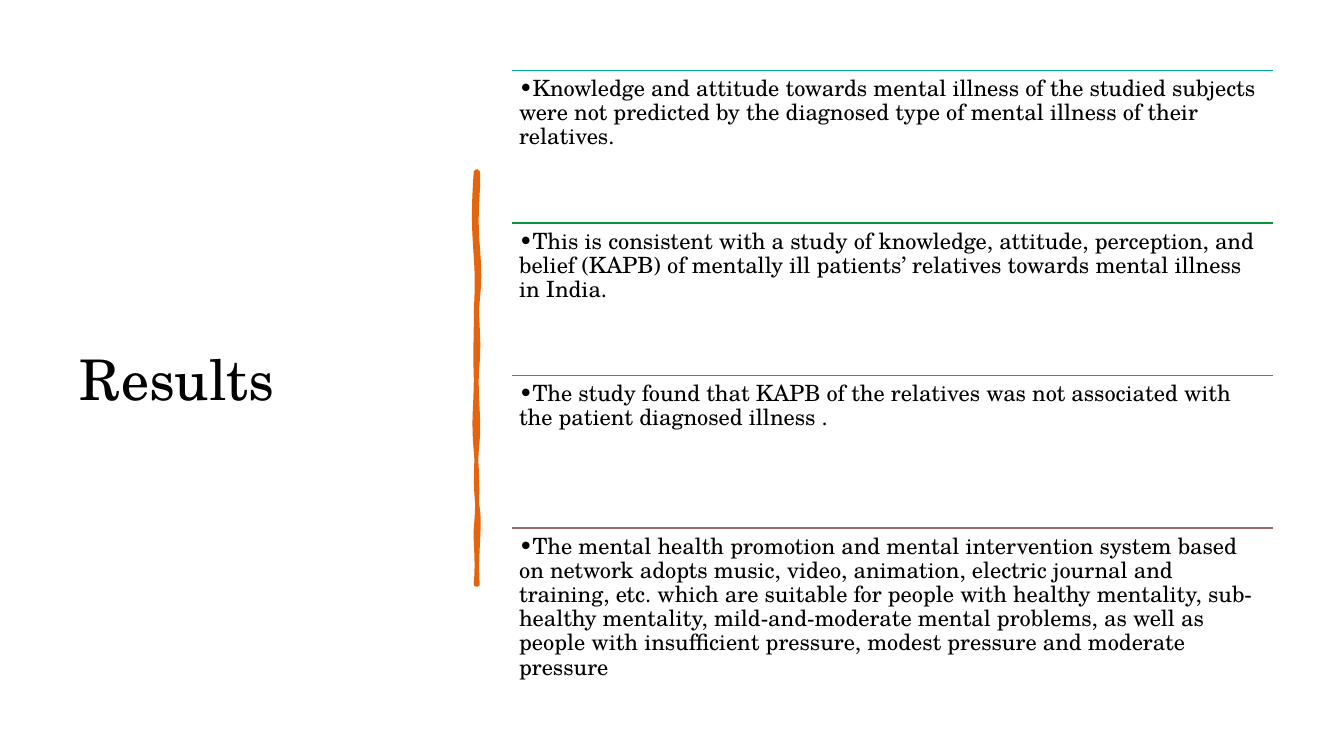
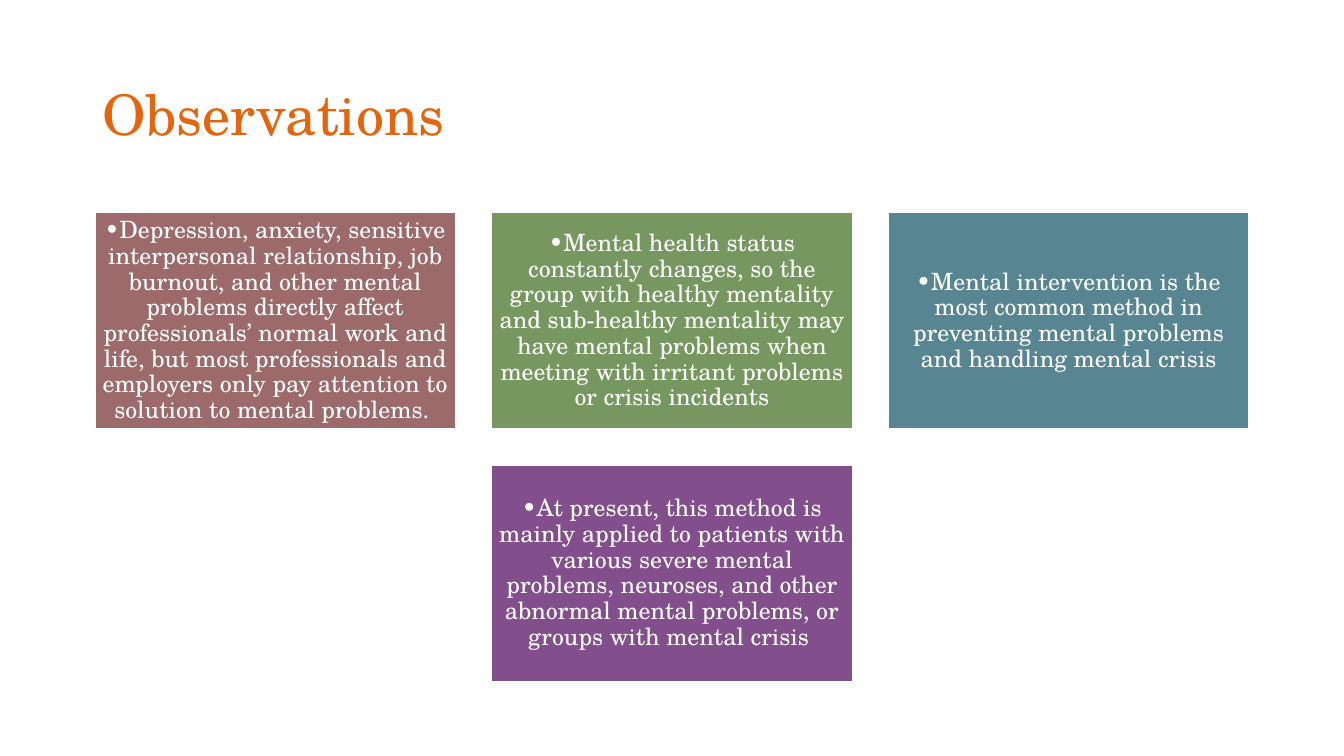
from dataclasses import dataclass

from lxml import etree
from pptx import Presentation
from pptx.dml.color import RGBColor
from pptx.enum.shapes import MSO_CONNECTOR, MSO_SHAPE
from pptx.enum.text import MSO_ANCHOR, PP_ALIGN
from pptx.oxml.ns import qn
from pptx.util import Pt

LEFT, CENTER = PP_ALIGN.LEFT, PP_ALIGN.CENTER
TOP, MIDDLE = MSO_ANCHOR.TOP, MSO_ANCHOR.MIDDLE
RECT, STRAIGHT = MSO_SHAPE.RECTANGLE, MSO_CONNECTOR.STRAIGHT

# Shared style
FONT = "TeX Gyre Schola"
BLACK, WHITE, ORANGE = "000000", "FFFFFF", "E4650E"
WIDE, HIGH = 960, 540
SIDES = ("left", "right", "top", "bottom")
TITLE = {"size": 40, "align": LEFT, "anchor": MIDDLE, "space": 1.0,
         "pads": (7.2, 7.2, 3.6, 3.6)}
POINT = {"size": 16, "align": LEFT, "anchor": TOP, "space": 0.9, "pads": (4.8,) * 4}
CARD = POINT | {"size": 17, "align": CENTER, "anchor": MIDDLE}

# Results list
LIST_X, LIST_Y, LIST_W, STEP = 366, 50.4, 543.6, 108.95

# Card grid
COLS, CARD_W, CARD_Y = 3, 257.6, 151.9
CARD_H, GAP = CARD_W * 0.6, CARD_W * 0.1

# Brush stroke: start, then two controls and an end for each curve
START = (339.8, 122.4)
CURVES = [
    ((340.6, 122.4), (340.6, 122.4), (341.3, 122.4)),
    ((342.7, 133.9), (339.1, 149), (341.3, 175)),
    ((343.4, 200.9), (342, 205.2), (341.3, 215.3)),
    ((339.8, 225.4), (342.7, 238.3), (341.3, 258.5)),
    ((339.1, 278.6), (342.7, 297.4), (341.3, 313.9)),
    ((339.8, 329.8), (339.1, 349.2), (341.3, 362.9)),
    ((343.4, 376.6), (339.8, 394.6), (341.3, 417.6)),
    ((340.6, 417.6), (340.6, 417.6), (339.8, 417.6)),
    ((341.3, 398.9), (339.1, 385.9), (339.8, 377.3)),
    ((340.6, 369.4), (342, 347.8), (339.8, 322.6)),
    ((337.7, 297.4), (339.8, 292.3), (339.8, 270)),
    ((339.1, 248.4), (339.8, 245.5), (339.8, 229.7)),
    ((339.8, 214.6), (341.3, 205.2), (339.8, 183.6)),
    ((338.4, 162.7), (337.7, 152.6), START),
]


@dataclass
class Item:
    color: str
    text: str


POINTS = [
    Item("00A5AB", "•Knowledge and attitude towards mental illness of the studied "
         "subjects were not predicted by the diagnosed type of mental illness of "
         "their relatives."),
    Item("09963B", "•This is consistent with a study of knowledge, attitude, "
         "perception, and belief (KAPB) of mentally ill patients’ relatives "
         "towards mental illness in India. "),
    Item("E64823", "•The study found that KAPB of the relatives was not associated "
         "with the patient diagnosed illness ."),
    Item("9C6A6A", "•The mental health promotion and mental intervention system "
         "based on network adopts music, video, animation, electric journal and "
         "training, etc. which are suitable for people with healthy mentality, "
         "sub-healthy mentality, mild-and-moderate mental problems, as well as "
         "people with insufficient pressure, modest pressure and moderate "
         "pressure "),
]
CARDS = [
    Item("9C6A6A", "•Depression, anxiety, sensitive interpersonal relationship, job "
         "burnout, and other mental problems directly affect professionals’ normal "
         "work and life, but most professionals and employers only pay attention "
         "to solution to mental problems. "),
    Item("769860", "•Mental health status constantly changes, so the group with "
         "healthy mentality and sub-healthy mentality may have mental problems "
         "when meeting with irritant problems or crisis incidents"),
    Item("578592", "•Mental intervention is the most common method in preventing "
         "mental problems and handling mental crisis"),
    Item("824F8C", "•At present, this method is mainly applied to patients with "
         "various severe mental problems, neuroses, and other abnormal mental "
         "problems, or groups with mental crisis "),
]


def rgb(code: str) -> RGBColor:
    return RGBColor.from_string(code)


def write(shape, text: str, color: str, style: dict) -> None:
    frame = shape.text_frame
    para = frame.paragraphs[0]
    run = para.add_run()
    run.text = text
    run.font.color.rgb = rgb(color)
    pads = {f"margin_{side}": Pt(pad) for side, pad in zip(SIDES, style["pads"])}
    formats = [
        (frame, {"word_wrap": True, "vertical_anchor": style["anchor"], **pads}),
        (para, {"alignment": style["align"], "line_spacing": style["space"]}),
        (run.font, {"name": FONT, "size": Pt(style["size"])}),
    ]
    for target, values in formats:
        for name, value in values.items():
            setattr(target, name, value)


def add_text(slide, x: float, y: float, w: float, h: float,
             text: str, color: str, style: dict) -> None:
    write(slide.shapes.add_textbox(Pt(x), Pt(y), Pt(w), Pt(h)), text, color, style)


def paint(shape, fill: str, edge: str = "", width: float = 0) -> None:
    shape.shadow.inherit = False
    shape.fill.solid()
    shape.fill.fore_color.rgb = rgb(fill)
    if edge:
        shape.line.color.rgb = rgb(edge)
        shape.line.width = Pt(width)
    else:
        shape.line.fill.background()


def add_rect(slide, x: float, y: float, w: float, h: float):
    return slide.shapes.add_shape(RECT, Pt(x), Pt(y), Pt(w), Pt(h))


def add_rule(slide, x: float, y: float, w: float, color: str) -> None:
    rule = slide.shapes.add_connector(STRAIGHT, Pt(x), Pt(y), Pt(x + w), Pt(y))
    rule.line.color.rgb = rgb(color)
    rule.line.width = Pt(1)
    etree.SubElement(rule._element.spPr, qn("a:effectLst"))


def add_brush(slide) -> None:
    pen = slide.shapes.build_freeform(Pt(START[0]), Pt(START[1]))
    pen.add_line_segments([(Pt(x), Pt(y)) for *_, (x, y) in CURVES], close=True)
    brush = pen.convert_to_shape()
    # Bend each straight step into its curve
    steps = list(brush._element.iter(qn("a:lnTo")))
    for step, curve in zip(steps, CURVES):
        step.tag = qn("a:cubicBezTo")
        for dot in list(step):
            step.remove(dot)
        for x, y in curve:
            etree.SubElement(step, qn("a:pt"), x=str(Pt(x) - brush.left),
                             y=str(Pt(y) - brush.top))
    paint(brush, ORANGE, ORANGE, 2.75)


def add_card(slide, x: float, y: float, item: Item) -> None:
    card = add_rect(slide, x, y, CARD_W, CARD_H)
    paint(card, item.color, WHITE, 1)
    write(card, item.text, WHITE, CARD)


def draw_results(slide) -> None:
    add_text(slide, 50, 50.4, 269.3, 440, "Results", BLACK, TITLE)
    add_brush(slide)
    for row, item in enumerate(POINTS):
        y = LIST_Y + row * STEP
        add_rule(slide, LIST_X, y, LIST_W, item.color)
        add_text(slide, LIST_X, y, LIST_W, STEP, item.text, BLACK, POINT)


def draw_cards(slide) -> None:
    add_text(slide, 66, 28.8, 828, 104.4, "Observations", ORANGE, TITLE)
    # Each row is centred on the slide
    for first in range(0, len(CARDS), COLS):
        row = CARDS[first:first + COLS]
        x = (WIDE - len(row) * (CARD_W + GAP) + GAP) / 2
        y = CARD_Y + first // COLS * (CARD_H + GAP)
        for col, item in enumerate(row):
            add_card(slide, x + col * (CARD_W + GAP), y, item)


def main() -> None:
    deck = Presentation()
    deck.slide_width, deck.slide_height = Pt(WIDE), Pt(HIGH)
    blank = deck.slide_layouts[6]
    for draw in (draw_results, draw_cards):
        slide = deck.slides.add_slide(blank)
        paint(add_rect(slide, 0, 0, WIDE, HIGH), WHITE)
        draw(slide)
    deck.save("out.pptx")


if __name__ == "__main__":
    main()
